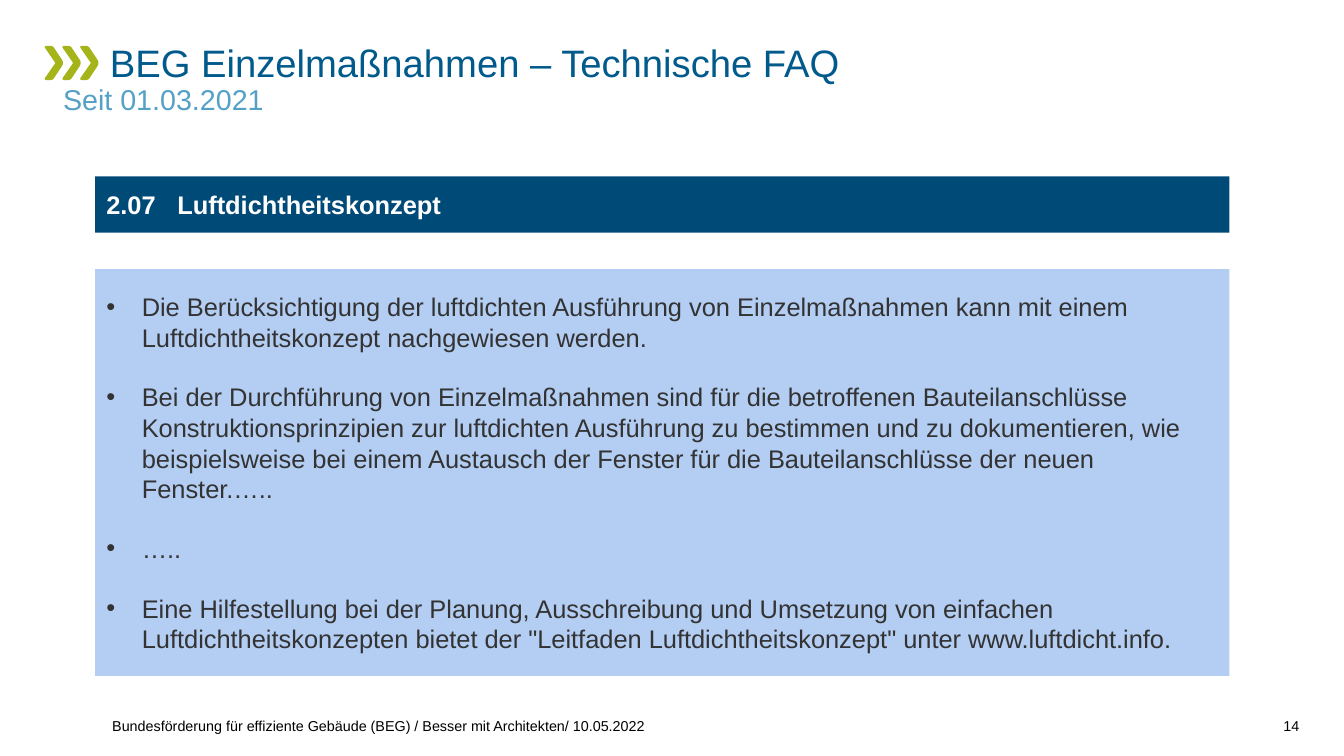
import pptx
import pptx.util
import pptx.dml.color
import pptx.enum.shapes
import pptx.enum.text
from dataclasses import dataclass
from lxml import etree

# Content
TITLE = "BEG Einzelmaßnahmen – Technische FAQ"
SUBTITLE = "Seit 01.03.2021"
HEADING = "2.07\tLuftdichtheitskonzept"
ANSWERS = [
    "Die Berücksichtigung der luftdichten Ausführung von Einzelmaßnahmen kann mit einem "
    "Luftdichtheitskonzept nachgewiesen werden.",
    "Bei der Durchführung von Einzelmaßnahmen sind für die betroffenen Bauteilanschlüsse "
    "Konstruktionsprinzipien zur luftdichten Ausführung zu bestimmen und zu dokumentieren, wie "
    "beispielsweise bei einem Austausch der Fenster für die Bauteilanschlüsse der neuen Fenster.…..",
    "…..",
    "Eine Hilfestellung bei der Planung, Ausschreibung und Umsetzung von einfachen "
    "Luftdichtheitskonzepten bietet der \"Leitfaden Luftdichtheitskonzept\" unter www.luftdicht.info.",
]
FOOTER = "Bundesförderung für effiziente Gebäude (BEG) / Besser mit Architekten/ 10.05.2022"
PAGE_NUMBER = "14"


@dataclass(frozen=True)
class Theme:
    font: str = "Arial"
    title: str = "005A8C"
    subtitle: str = "55A0C6"
    chevron: str = "A4B419"
    heading_fill: str = "004A78"
    heading_text: str = "FFFFFF"
    answer_fill: str = "B3CDF3"
    answer_text: str = "333333"
    footer: str = "000000"
    title_size: float = 24
    subtitle_size: float = 18
    body_size: float = 16
    footer_size: float = 9


THEME = Theme()
INCH = pptx.util.Inches
ANCHOR = pptx.enum.text.MSO_ANCHOR
ALIGN = pptx.enum.text.PP_ALIGN

# Layout: page margins, panel column and rows, in inches
WIDTH, HEIGHT = 11.73, 6.6
MARGIN, RIGHT = 0.55, 11.34
PANEL_LEFT = 0.83
PANEL_WIDTH = 9.9
TITLE_INDENT, BULLET_INDENT, HEADING_TAB = 0.41, 0.31, 0.62
FOOTER_TOP, FOOTER_HEIGHT, FOOTER_LEFT = 6.13, 0.28, 0.98
PAGE_WIDTH = 0.41
CHEVRON_LEFT, CHEVRON_TOP, CHEVRON_STEP = 0.39, 0.4, 0.155
# Upper half of a chevron in hundredths of an inch, mirrored below its tip
CHEVRON_HALF = [(9.4, 15), (0.8, 2.6), (0, 1.2), (0.5, 0.3), (2, 0), (5, 0),
                (6.7, 0.4), (7.8, 1.2), (15, 12), (15.8, 13.6)]
CHEVRON_OUTLINE = CHEVRON_HALF + [(16, 15)] + [(x, 30 - y) for x, y in CHEVRON_HALF[:0:-1]]


def color(value):
    return pptx.dml.color.RGBColor.from_string(value)


def style(paragraph, size, ink, bold=False):
    font = paragraph.font
    font.name, font.size, font.bold = THEME.font, pptx.util.Pt(size), bold
    font.color.rgb = color(ink)


def add_ppr_child(paragraph, tag, **attributes):
    properties = paragraph._p.get_or_add_pPr()
    namespace = etree.QName(properties).namespace
    return etree.SubElement(properties, f"{{{namespace}}}{tag}", attributes)


def add_label(slide, text, box, size, ink, anchor=ANCHOR.TOP, align=ALIGN.LEFT):
    frame = slide.shapes.add_textbox(*map(INCH, box)).text_frame
    frame.margin_left = frame.margin_right = frame.margin_top = frame.margin_bottom = 0
    frame.word_wrap, frame.vertical_anchor = True, anchor
    frame.text = text
    paragraph = frame.paragraphs[0]
    paragraph.alignment = align
    style(paragraph, size, ink)
    return paragraph


def fill_plain(shape, fill):
    shape.shadow.inherit = False
    shape.fill.solid()
    shape.fill.fore_color.rgb = color(fill)
    shape.line.fill.background()


def add_panel(slide, top, height, fill, wrap):
    panel = slide.shapes.add_shape(pptx.enum.shapes.MSO_SHAPE.RECTANGLE,
                                   *map(INCH, (PANEL_LEFT, top, PANEL_WIDTH, height)))
    fill_plain(panel, fill)
    panel.text_frame.word_wrap = wrap
    panel.text_frame.vertical_anchor = ANCHOR.MIDDLE
    return panel.text_frame


def add_chevron(slide, left):
    points = [(INCH(left + x / 100), INCH(CHEVRON_TOP + y / 100)) for x, y in CHEVRON_OUTLINE]
    outline = slide.shapes.build_freeform(*points[0])
    outline.add_line_segments(points[1:], close=True)
    fill_plain(outline.convert_to_shape(), THEME.chevron)


def main():
    deck = pptx.Presentation()
    deck.slide_width, deck.slide_height = INCH(WIDTH), INCH(HEIGHT)
    slide = deck.slides.add_slide(deck.slide_layouts[6])

    # Title area
    for index in range(3):
        add_chevron(slide, CHEVRON_LEFT + index * CHEVRON_STEP)
    subtitle = add_label(slide, SUBTITLE, (MARGIN, 0.74, RIGHT - MARGIN, 0.36),
                         THEME.subtitle_size, THEME.subtitle)
    title = add_label(slide, TITLE, (MARGIN, 0.37, RIGHT - MARGIN, 0.41),
                      THEME.title_size, THEME.title)
    title._p.get_or_add_pPr().set("indent", str(INCH(TITLE_INDENT)))
    subtitle.line_spacing = title.line_spacing = 0.95

    # Question heading
    heading_frame = add_panel(slide, 1.54, 0.49, THEME.heading_fill, wrap=True)
    heading_frame.text = HEADING
    heading = heading_frame.paragraphs[0]
    heading.alignment = ALIGN.LEFT
    tabs = add_ppr_child(heading, "tabLst")
    etree.SubElement(tabs, tabs.tag.replace("tabLst", "tab"), pos=str(INCH(HEADING_TAB)), algn="l")
    style(heading, THEME.body_size, THEME.heading_text, bold=True)

    # Answers, one empty line's height apart
    answer_frame = add_panel(slide, 2.35, 3.55, THEME.answer_fill, wrap=True)
    answer_frame.text = "\n".join(ANSWERS)
    for index, answer in enumerate(answer_frame.paragraphs):
        answer.alignment = ALIGN.LEFT
        if index:
            answer.space_before = pptx.util.Pt(THEME.body_size * 1.15)
        properties = answer._p.get_or_add_pPr()
        properties.set("marL", str(INCH(BULLET_INDENT)))
        properties.set("indent", str(-INCH(BULLET_INDENT)))
        add_ppr_child(answer, "buFont", typeface=THEME.font)
        add_ppr_child(answer, "buChar", char="•")
        style(answer, THEME.body_size, THEME.answer_text)

    # Footer
    add_label(slide, FOOTER, (FOOTER_LEFT, FOOTER_TOP, PANEL_WIDTH, FOOTER_HEIGHT),
              THEME.footer_size, THEME.footer, ANCHOR.BOTTOM)
    add_label(slide, PAGE_NUMBER, (RIGHT - PAGE_WIDTH, FOOTER_TOP, PAGE_WIDTH, FOOTER_HEIGHT),
              THEME.footer_size, THEME.footer, ANCHOR.BOTTOM, ALIGN.RIGHT)

    deck.save("out.pptx")


if __name__ == "__main__":
    main()
